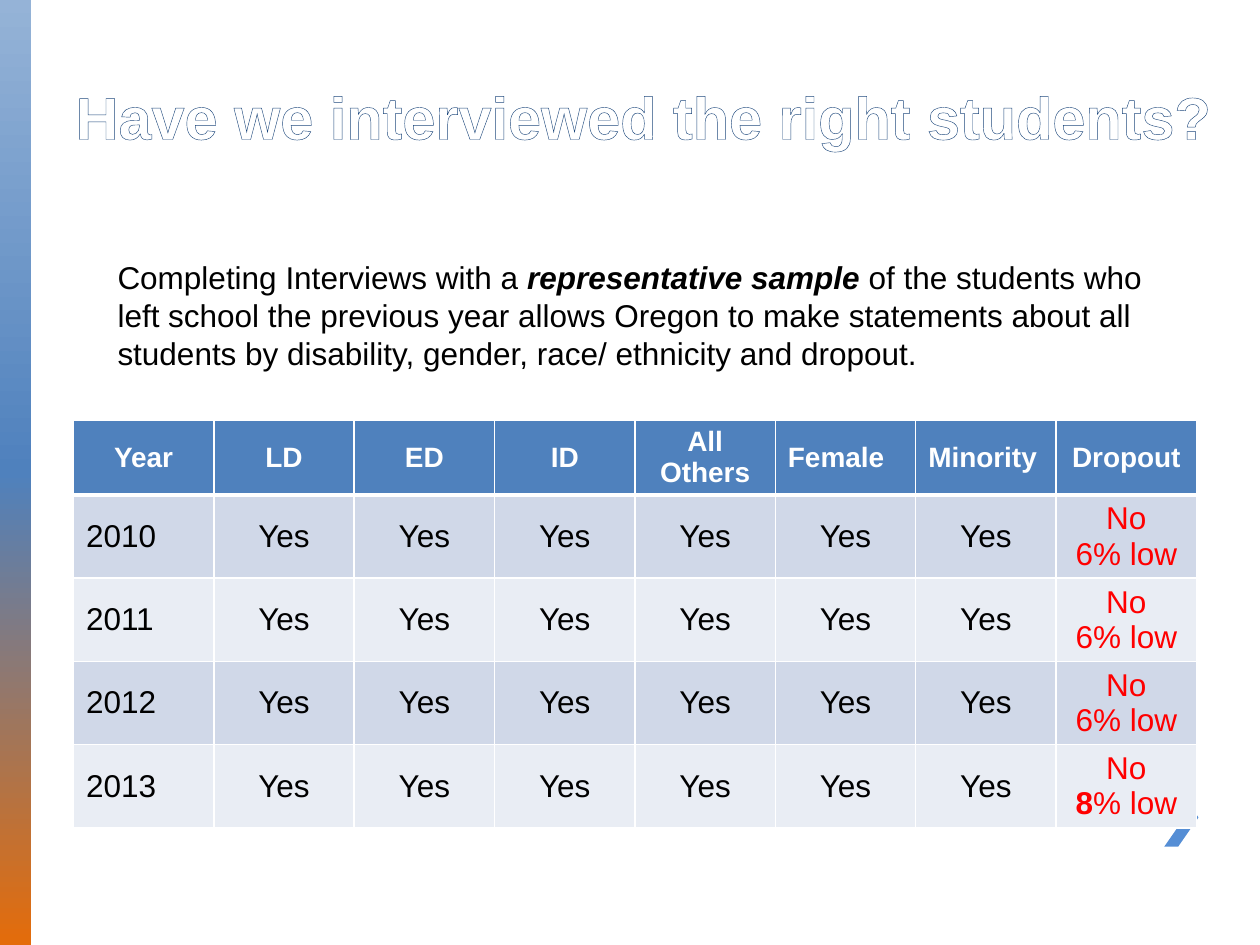
from dataclasses import dataclass
import copy

import lxml.etree
import pptx
import pptx.dml.color
import pptx.enum.dml
import pptx.enum.shapes
import pptx.enum.text
import pptx.oxml.ns
import pptx.slide
import pptx.table
import pptx.text.text
import pptx.util
from pptx.dml.color import RGBColor
from pptx.util import Cm

WHITE = RGBColor(0xFF, 0xFF, 0xFF)
BLACK = RGBColor(0x00, 0x00, 0x00)
RED = RGBColor(0xFF, 0x00, 0x00)
NAVY = RGBColor(0x1F, 0x49, 0x7D)
BLUE = RGBColor(0x4F, 0x81, 0xBD)
LIGHT_BLUE = RGBColor(0x95, 0xB3, 0xD7)
CHEVRON_BLUE = RGBColor(0x55, 0x8E, 0xD5)
ORANGE = RGBColor(0xE4, 0x6C, 0x0A)
DARK_BAND = RGBColor(0xD0, 0xD8, 0xE8)
LIGHT_BAND = RGBColor(0xE9, 0xED, 0xF4)

FONT = "Arial"
LEFT = pptx.enum.text.PP_ALIGN.LEFT
CENTER = pptx.enum.text.PP_ALIGN.CENTER
qn = pptx.oxml.ns.qn


@dataclass(frozen=True)
class Heading:
    label: str
    align: pptx.enum.text.PP_ALIGN = CENTER


@dataclass(frozen=True)
class YearResult:
    year: str
    shortfall: str
    emphasize: bool = False


HEADINGS = [
    Heading("Year"),
    Heading("LD"),
    Heading("ED"),
    Heading("ID"),
    Heading("All Others"),
    Heading("Female", LEFT),
    Heading("Minority", LEFT),
    Heading("Dropout"),
]
RESULTS = [
    YearResult("2010", "6"),
    YearResult("2011", "6"),
    YearResult("2012", "6"),
    YearResult("2013", "8", emphasize=True),
]


def write(
    paragraph: pptx.text.text._Paragraph,
    text: str,
    *,
    size: float = 18,
    color: RGBColor = BLACK,
    bold: bool = False,
    italic: bool = False,
    align: pptx.enum.text.PP_ALIGN = LEFT,
) -> pptx.text.text._Run:
    paragraph.alignment = align
    run = paragraph.add_run()
    run.text = text
    run.font.name = FONT
    run.font.size = pptx.util.Pt(size)
    run.font.color.rgb = color
    run.font.bold = bold
    run.font.italic = italic
    return run


def make_line(tag: str, points: float, color: RGBColor) -> lxml.etree._Element:
    line = lxml.etree.Element(qn(tag), w=str(pptx.util.Pt(points)))
    fill = lxml.etree.SubElement(line, qn("a:solidFill"))
    lxml.etree.SubElement(fill, qn("a:srgbClr"), val=str(color))
    return line


def draw_side_bar(slide: pptx.slide.Slide) -> None:
    bar = slide.shapes.add_shape(
        pptx.enum.shapes.MSO_SHAPE.RECTANGLE, 0, 0, Cm(0.63), Cm(19.05)
    )
    bar.shadow.inherit = False
    bar.line.fill.background()
    bar.fill.gradient()
    bar.fill.gradient_angle = 270
    stop_list = bar._element.spPr.find(".//" + qn("a:gsLst"))
    stop_list.append(copy.deepcopy(stop_list[0]))
    colors = [LIGHT_BLUE, BLUE, ORANGE]
    for stop, color, position in zip(bar.fill.gradient_stops, colors, [0, 0.5, 1]):
        stop.color.rgb = color
        stop.position = position


def draw_chevron(slide: pptx.slide.Slide) -> None:
    outline = slide.shapes.build_freeform(2375, 1588, scale=Cm(0.01))
    outline.add_line_segments(
        [(2347, 1588), (2388, 1648), (2347, 1707), (2375, 1707), (2416, 1648)]
    )
    chevron = outline.convert_to_shape()
    chevron.shadow.inherit = False
    chevron.line.fill.background()
    chevron.fill.solid()
    chevron.fill.fore_color.rgb = CHEVRON_BLUE


def draw_title(slide: pptx.slide.Slide) -> None:
    title = slide.shapes.title
    title.left, title.top, title.width, title.height = Cm(1.27), Cm(1.06), Cm(24.13), Cm(2.12)
    frame = title.text_frame
    frame.auto_size = pptx.enum.text.MSO_AUTO_SIZE.NONE
    frame.vertical_anchor = pptx.enum.text.MSO_ANCHOR.BOTTOM
    question = write(
        frame.paragraphs[0],
        "Have we interviewed the right students?",
        size=34,
        color=WHITE,
        bold=True,
    )
    question.font._element.insert(0, make_line("a:ln", 1, NAVY))


def style_cell(
    cell: pptx.table._Cell, fill: RGBColor, top: float = 1, bottom: float = 1
) -> None:
    cell.vertical_anchor = pptx.enum.text.MSO_ANCHOR.MIDDLE
    properties = cell._tc.get_or_add_tcPr()
    for side, points in {"L": 1, "R": 1, "T": top, "B": bottom}.items():
        properties.append(make_line(f"a:ln{side}", points, WHITE))
    cell.fill.solid()
    cell.fill.fore_color.rgb = fill


def draw_results(slide: pptx.slide.Slide) -> None:
    table = slide.shapes.add_table(
        len(RESULTS) + 1, len(HEADINGS), Cm(1.48), Cm(8.47), Cm(22.64), Cm(8.08)
    ).table
    for column in table.columns:
        column.width = Cm(2.83)
    for index, row in enumerate(table.rows):
        row.height = Cm(1.65) if index else Cm(1.48)

    for column, heading in enumerate(HEADINGS):
        cell = table.cell(0, column)
        style_cell(cell, BLUE, bottom=3)
        write(
            cell.text_frame.paragraphs[0],
            heading.label,
            size=16,
            color=WHITE,
            bold=True,
            align=heading.align,
        )

    last = len(HEADINGS) - 1
    for row, result in enumerate(RESULTS, start=1):
        for column in range(len(HEADINGS)):
            cell = table.cell(row, column)
            style_cell(cell, DARK_BAND if row % 2 else LIGHT_BAND, top=3 if row == 1 else 1)
            answer = cell.text_frame.paragraphs[0]
            if column == 0:
                write(answer, result.year)
            elif column < last:
                write(answer, "Yes", align=CENTER)
            else:
                write(answer, "No", color=RED, align=CENTER)
                gap = cell.text_frame.add_paragraph()
                write(gap, result.shortfall, color=RED, bold=result.emphasize, align=CENTER)
                write(gap, "% low", color=RED, align=CENTER)


def draw_explanation(slide: pptx.slide.Slide) -> None:
    frame = slide.shapes.add_textbox(Cm(2.12), Cm(5.08), Cm(21.79), Cm(2.57)).text_frame
    frame.word_wrap = True
    explanation = frame.paragraphs[0]
    write(explanation, "Completing Interviews with a ")
    write(explanation, "representative sample ", bold=True, italic=True)
    write(
        explanation,
        "of the students who left school the previous year allows Oregon to make "
        "statements about all students by disability, gender, race/ ethnicity and dropout.",
    )


def main() -> None:
    deck = pptx.Presentation()
    deck.slide_width, deck.slide_height = Cm(25.4), Cm(19.05)
    slide = deck.slides.add_slide(deck.slide_layouts.get_by_name("Title Only"))
    draw_side_bar(slide)
    draw_chevron(slide)
    draw_title(slide)
    draw_results(slide)
    draw_explanation(slide)
    deck.save("out.pptx")


if __name__ == "__main__":
    main()
